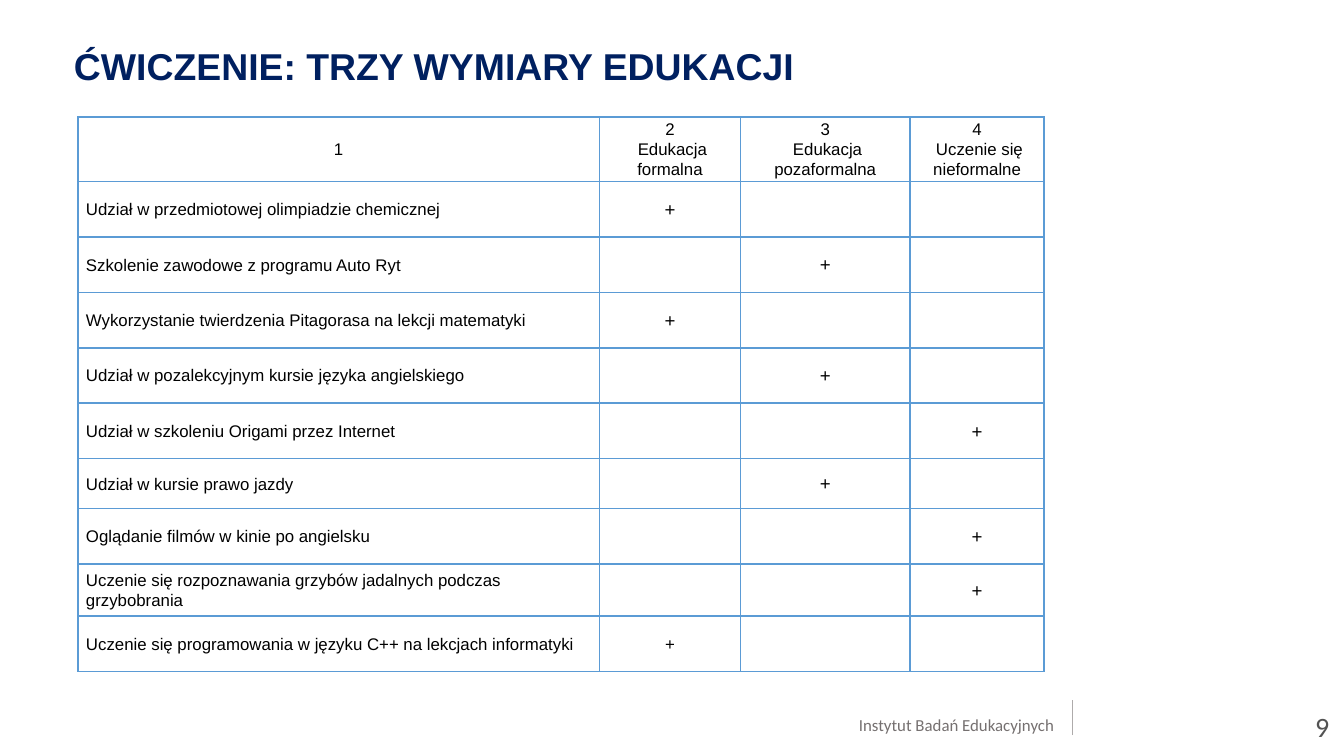
import pptx
import pptx.dml.color
import pptx.enum.shapes
import pptx.enum.text
import pptx.oxml
import pptx.oxml.ns
import pptx.util
from lxml import etree

Inches, Pt = pptx.util.Inches, pptx.util.Pt
ALIGN, ANCHOR = pptx.enum.text.PP_ALIGN, pptx.enum.text.MSO_ANCHOR
qn = pptx.oxml.ns.qn

SLIDE_WIDTH = 10
SLIDE_HEIGHT = SLIDE_WIDTH * 9 / 16
COLUMN_WIDTHS = (3.88, 1.05, 1.26, 1)
TABLE_HEIGHT = 4.13
SPECIAL_HEIGHTS = {0: 0.48, 6: 0.37, 8: 0.39}
BORDER = "5B9BD5"

# A vertical tab is a line break inside a paragraph
HEADERS = ("1", "2\n Edukacja\vformalna", "3\n Edukacja\npozaformalna",
           "4\n Uczenie się nieformalne")

# Each activity with the column that holds its plus sign
ACTIVITIES = (
    ("Udział w przedmiotowej olimpiadzie chemicznej", 1),
    ("Szkolenie zawodowe z programu Auto Ryt", 2),
    ("Wykorzystanie twierdzenia Pitagorasa na lekcji matematyki", 1),
    ("Udział w pozalekcyjnym kursie języka angielskiego", 2),
    ("Udział w szkoleniu Origami przez Internet", 3),
    ("Udział w kursie prawo jazdy", 2),
    ("Oglądanie filmów w kinie po angielsku", 3),
    ("Uczenie się rozpoznawania grzybów jadalnych podczas grzybobrania", 3),
    ("Uczenie się programowania w języku C++ na lekcjach informatyki", 1),
)


def rgb(value):
    return pptx.dml.color.RGBColor.from_string(value)


def place(item, left, top, width, height):
    item.left, item.top = Inches(left), Inches(top)
    item.width, item.height = Inches(width), Inches(height)


def set_margins(item, side, vertical):
    item.margin_left = item.margin_right = Inches(side)
    item.margin_top = item.margin_bottom = Inches(vertical)


def write(frame, text, size, color="000000", font="Arial", align=ALIGN.LEFT,
          bold=False, spacing=None):
    frame.text = text
    for paragraph in frame.paragraphs:
        paragraph.alignment = align
        paragraph.line_spacing = spacing
        for run in paragraph.runs:
            run.font.name, run.font.size, run.font.bold = font, Pt(size), bold
            run.font.color.rgb = rgb(color)


def add_label(slide, box, text, size, color, margins):
    label = slide.shapes.add_textbox(0, 0, 0, 0)
    place(label, *box)
    frame = label.text_frame
    frame.word_wrap = True
    set_margins(frame, *margins)
    write(frame, text, size, color, "Calibri", ALIGN.RIGHT)
    return frame


def add_title(slide, text):
    title = slide.shapes.title
    place(title, 0.48, 0.28, 7.96, 0.41)
    frame = title.text_frame
    frame.vertical_anchor = ANCHOR.TOP
    frame.auto_size = pptx.enum.text.MSO_AUTO_SIZE.NONE
    set_margins(frame, 0.07, 0.04)
    write(frame, text, 20, "002060", bold=True)


def outline_cell(cell):
    properties = cell._tc.get_or_add_tcPr()
    for position, side in enumerate(("lnL", "lnR", "lnT", "lnB")):
        border = pptx.oxml.parse_xml(
            f'<a:{side} {pptx.oxml.ns.nsdecls("a")} w="{Pt(1)}"><a:solidFill>'
            f'<a:srgbClr val="{BORDER}"/></a:solidFill></a:{side}>')
        properties.insert(position, border)


def fill_cell(cell, text, size, align):
    cell.fill.background()
    outline_cell(cell)
    set_margins(cell, 0.06, 0)
    cell.vertical_anchor = ANCHOR.MIDDLE
    write(cell.text_frame, text, size, align=align, spacing=1.07)


def add_activity_table(slide):
    row_count = len(ACTIVITIES) + 1
    regular = ((TABLE_HEIGHT - sum(SPECIAL_HEIGHTS.values()))
               / (row_count - len(SPECIAL_HEIGHTS)))
    table = slide.shapes.add_table(
        row_count, len(COLUMN_WIDTHS), Inches(0.58), Inches(0.87),
        Inches(sum(COLUMN_WIDTHS)), Inches(TABLE_HEIGHT)).table
    table.horz_banding = False
    for column, width in zip(table.columns, COLUMN_WIDTHS):
        column.width = Inches(width)
    for index, row in enumerate(table.rows):
        row.height = Inches(SPECIAL_HEIGHTS.get(index, regular))

    for column, header in enumerate(HEADERS):
        fill_cell(table.cell(0, column), header, 9, ALIGN.CENTER)
    for row, (activity, marked) in enumerate(ACTIVITIES, 1):
        fill_cell(table.cell(row, 0), activity, 9, ALIGN.LEFT)
        plus_size = 9 if row == len(ACTIVITIES) else 10
        for column in range(1, len(COLUMN_WIDTHS)):
            plus = "+" if column == marked else ""
            fill_cell(table.cell(row, column), plus, plus_size, ALIGN.CENTER)


def add_divider(slide, x, bottom, top):
    divider = slide.shapes.add_connector(
        pptx.enum.shapes.MSO_CONNECTOR.STRAIGHT,
        Inches(x), Inches(bottom), Inches(x), Inches(top))
    divider.line.color.rgb = rgb("AEABAB")
    divider.line.width = Pt(0.75)
    etree.SubElement(divider._element.spPr, qn("a:effectLst"))


def main():
    presentation = pptx.Presentation()
    presentation.slide_width = Inches(SLIDE_WIDTH)
    presentation.slide_height = Inches(SLIDE_HEIGHT)
    slide = presentation.slides.add_slide(presentation.slide_layouts[5])

    add_title(slide, "ĆWICZENIE: TRZY WYMIARY EDUKACJI")
    add_activity_table(slide)

    # Footer: institute, divider and page number
    add_label(slide, (6.17, 5.32, 1.67, 0.14), "Instytut Badań Edukacyjnych",
              9, "757070", (0, 0))
    add_divider(slide, 7.98, 5.47, 5.21)
    page_number = add_label(slide, (9.36, 5.19, 0.6, 0.43), "9",
                            15, "535353", (0.07, 0.04))
    page_number.vertical_anchor = ANCHOR.MIDDLE

    presentation.save("out.pptx")


if __name__ == "__main__":
    main()
